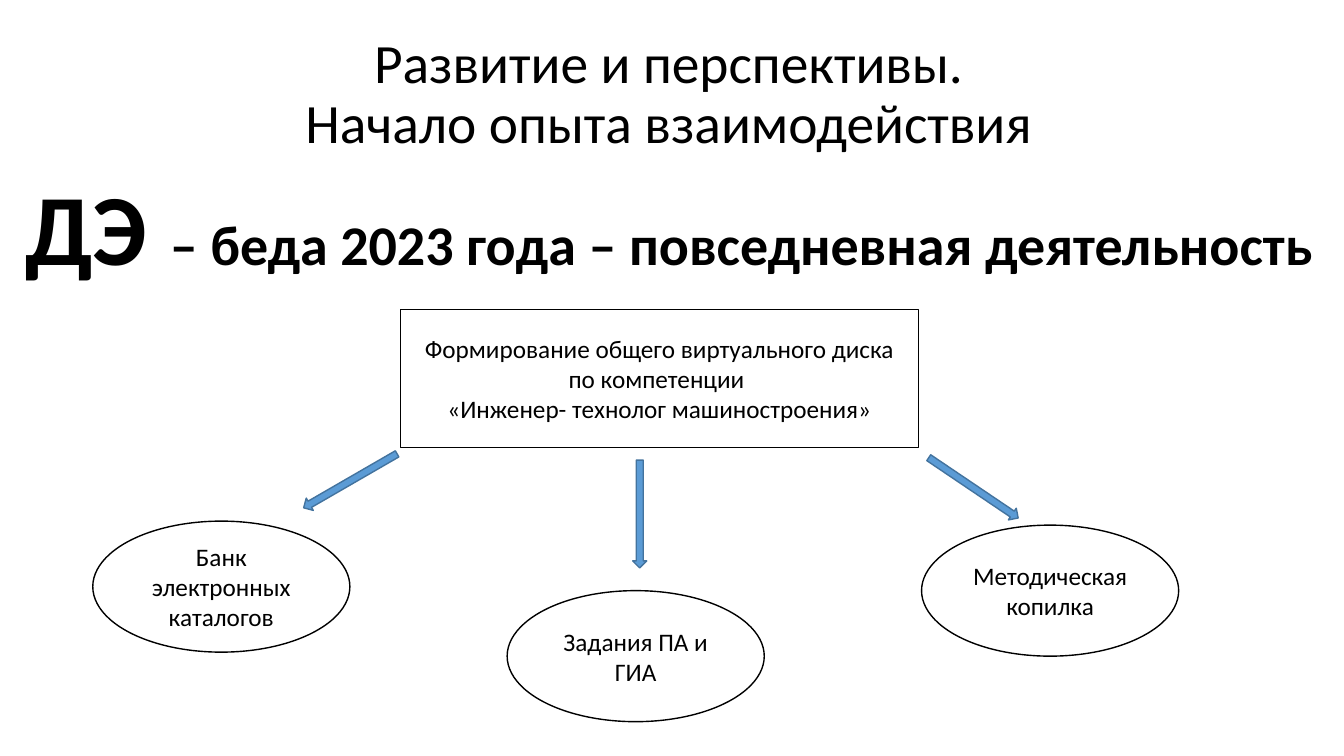
from pptx import Presentation
from pptx.dml.color import RGBColor
from pptx.enum import shapes, text
from pptx.util import Inches, Pt

# Content
TITLE_LINES = ["Развитие и перспективы. ", "Начало опыта взаимодействия "]
TITLE_BOX = (0.64, 0.4, 12.11, 1.09)
SLOGAN = [("ДЭ ", "slogan_lead"),
          ("– беда 2023 года – повседневная деятельность", "slogan")]
SLOGAN_BOX = (0.15, 1.58, 13.33, 1.31)
DISK = ["Формирование общего виртуального диска по компетенции ",
        "«Инженер- технолог машиностроения»"]
DISK_BOX = (3.97, 3.07, 5.14, 1.37)
# Each branch: label, ellipse left and top, arrow left, top and rotation
BRANCHES = [
    ("Банк электронных каталогов", (0.92, 5.17), (2.94, 4.7, 150)),
    ("Задания ПА и ГИА", (5.03, 5.86), (5.81, 5.03, 90)),
    ("Методическая копилка", (9.14, 5.21), (9.12, 4.77, 34)),
]
ELLIPSE_SIZE = (2.55, 1.3)
ARROW_SIZE = (1.07, 0.14)

THEME = {
    "font": "Calibri",
    "colors": {"ink": "000000", "paper": "FFFFFF",
               "arrow": "5B9BD5", "arrow_edge": "43739E"},
    "sizes": {"title": 39.6, "slogan_lead": 72, "slogan": 40, "node": 18},
}


def color(role):
    return RGBColor.from_string(THEME["colors"][role])


def box(values):
    return [Inches(value) for value in values]


def add_run(paragraph, words, role, bold=False):
    run = paragraph.add_run()
    run.text = words
    run.font.name = THEME["font"]
    run.font.size = Pt(THEME["sizes"][role])
    run.font.bold = bold
    run.font.color.rgb = color("ink")


def add_figure(slide, preset, place, fill="paper", edge="ink"):
    figure = slide.shapes.add_shape(preset, *box(place))
    figure.shadow.inherit = False
    figure.fill.solid()
    figure.fill.fore_color.rgb = color(fill)
    figure.line.color.rgb = color(edge)
    figure.line.width = Pt(1)
    return figure


def add_node(slide, preset, place, lines):
    frame = add_figure(slide, preset, place).text_frame
    frame.word_wrap = True
    frame.vertical_anchor = text.MSO_ANCHOR.MIDDLE
    for index, line in enumerate(lines):
        paragraph = frame.add_paragraph() if index else frame.paragraphs[0]
        paragraph.alignment = text.PP_ALIGN.CENTER
        add_run(paragraph, line, "node")


def main():
    deck = Presentation()
    deck.slide_width, deck.slide_height = Inches(13.33), Inches(7.5)
    slide = deck.slides.add_slide(deck.slide_layouts[5])

    # Title
    title = slide.shapes.title
    title.left, title.top, title.width, title.height = box(TITLE_BOX)
    title.text_frame.vertical_anchor = text.MSO_ANCHOR.MIDDLE
    heading = title.text_frame.paragraphs[0]
    heading.alignment = text.PP_ALIGN.CENTER
    heading.line_spacing = 0.9
    for index, line in enumerate(TITLE_LINES):
        if index:
            heading.add_line_break()
        add_run(heading, line, "title")

    # Slogan
    slogan = slide.shapes.add_textbox(*box(SLOGAN_BOX)).text_frame
    slogan.word_wrap = True
    slogan.auto_size = text.MSO_AUTO_SIZE.SHAPE_TO_FIT_TEXT
    for words, role in SLOGAN:
        add_run(slogan.paragraphs[0], words, role, bold=True)

    # Shared disk and its branches
    add_node(slide, shapes.MSO_SHAPE.RECTANGLE, DISK_BOX, DISK)
    for label, corner, _ in BRANCHES:
        add_node(slide, shapes.MSO_SHAPE.OVAL, corner + ELLIPSE_SIZE, [label])

    # Arrows from the disk to the branches
    for _, _, (left, top, angle) in BRANCHES:
        arrow = add_figure(slide, shapes.MSO_SHAPE.RIGHT_ARROW,
                           (left, top) + ARROW_SIZE, "arrow", "arrow_edge")
        arrow.rotation = angle

    deck.save("out.pptx")


if __name__ == "__main__":
    main()
